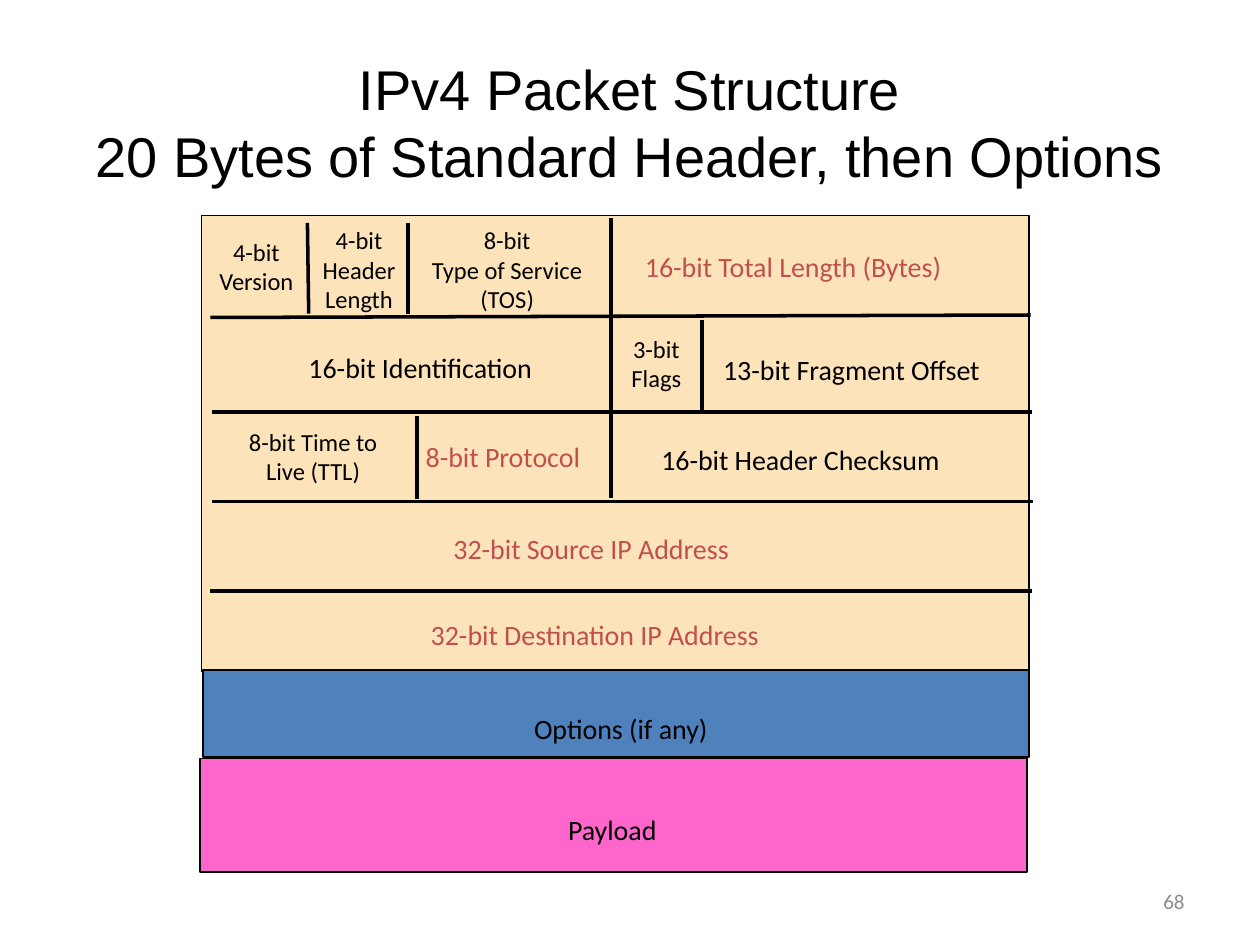
from typing import NamedTuple

from lxml import etree
from pptx import Presentation
from pptx.dml.color import RGBColor
from pptx.enum import shapes, text
from pptx.oxml import ns
from pptx.util import Inches, Pt

COLORS = {
    "black": "000000",
    "key": "C0504D",
    "header": "FDE3BA",
    "options": "4F81BD",
    "payload": "FF66CC",
    "number": "8C8C8C",
}
LEFT, CENTER, RIGHT = text.PP_ALIGN.LEFT, text.PP_ALIGN.CENTER, text.PP_ALIGN.RIGHT


class Band(NamedTuple):
    x: float
    y: float
    w: float
    h: float
    color: str


class Rule(NamedTuple):
    x1: float
    y1: float
    x2: float
    y2: float


class Label(NamedTuple):
    x: float
    y: float
    w: float
    h: float
    words: str
    size: int = 16
    color: str = "black"
    align: text.PP_ALIGN = LEFT


BANDS = [
    Band(1.6, 1.71, 6.57, 3.62, "header"),
    Band(1.61, 5.32, 6.56, 0.69, "options"),
    Band(1.59, 6.02, 6.56, 0.9, "payload"),
]
RULES = [
    Rule(1.67, 2.52, 8.18, 2.5),
    Rule(1.68, 3.27, 8.19, 3.27),
    Rule(1.68, 3.98, 8.2, 3.98),
    Rule(1.67, 4.69, 8.19, 4.69),
    Rule(4.85, 1.73, 4.85, 3.95),
    Rule(3.24, 1.77, 3.24, 2.49),
    Rule(2.44, 1.77, 2.45, 2.49),
    Rule(5.57, 2.54, 5.57, 3.26),
    Rule(3.31, 3.3, 3.31, 3.96),
]
LABELS = [
    Label(1.63, 1.83, 0.81, 0.57, "4-bit\nVersion", 14, align=CENTER),
    Label(2.45, 1.74, 0.8, 0.81, "4-bit\nHeader\nLength", 14, align=CENTER),
    Label(3.32, 1.74, 1.41, 0.81, "8-bit\nType of Service\n(TOS)", 14, align=CENTER),
    Label(5.02, 1.93, 2.61, 0.37, "16-bit Total Length (Bytes)", color="key"),
    Label(2.35, 2.73, 2.06, 0.37, "16-bit Identification"),
    Label(4.91, 2.6, 0.6, 0.57, "3-bit\nFlags", 14, align=CENTER),
    Label(5.64, 2.75, 2.28, 0.37, "13-bit Fragment Offset"),
    Label(1.87, 3.34, 1.23, 0.57, "8-bit Time to\nLive (TTL)", 14, align=CENTER),
    Label(3.28, 3.44, 1.45, 0.37, "8-bit Protocol", color="key"),
    Label(5.15, 3.46, 2.44, 0.37, "16-bit Header Checksum"),
    Label(3.5, 4.17, 2.42, 0.37, "32-bit Source IP Address", color="key"),
    Label(3.32, 4.85, 2.85, 0.37, "32-bit Destination IP Address", color="key"),
    Label(4.14, 5.6, 1.6, 0.37, "Options (if any)"),
    Label(4.41, 6.4, 0.92, 0.37, "Payload"),
]
PAGE_NUMBER = Label(7.17, 6.95, 2.33, 0.4, "68", 12, "number", RIGHT)


def rgb(name: str) -> RGBColor:
    return RGBColor.from_string(COLORS[name])


def set_attrs(target, values: dict) -> None:
    for name, value in values.items():
        setattr(target, name, value)


def style_text(tf, font: str, size: int, color: str, align: text.PP_ALIGN) -> None:
    for p in tf.paragraphs:
        p.alignment = align
        for r in p.runs:
            set_attrs(r.font, {"name": font, "size": Pt(size)})
            r.font.color.rgb = rgb(color)


def add_title(slide, words: str) -> None:
    sp = slide.shapes.title
    set_attrs(sp, {"left": Inches(0.5), "top": Inches(0.3),
                   "width": Inches(9), "height": Inches(1.25)})
    tf = sp.text_frame
    set_attrs(tf, {"text": words, "vertical_anchor": text.MSO_ANCHOR.BOTTOM,
                   "auto_size": text.MSO_AUTO_SIZE.NONE})
    style_text(tf, "Arial", 32, "black", CENTER)


def add_band(slide, band: Band) -> None:
    sp = slide.shapes.add_shape(shapes.MSO_SHAPE.RECTANGLE, *map(Inches, band[:4]))
    sp.shadow.inherit = False
    sp.fill.solid()
    sp.fill.fore_color.rgb = rgb(band.color)
    sp.line.color.rgb = rgb("black")
    sp.line.width = Pt(1)


def add_rule(slide, rule: Rule) -> None:
    line = slide.shapes.add_connector(shapes.MSO_CONNECTOR.STRAIGHT, *map(Inches, rule))
    line.line.color.rgb = rgb("black")
    line.line.width = Pt(2)
    etree.SubElement(line._element.spPr, ns.qn("a:effectLst"))


def add_label(slide, label: Label, anchor: text.MSO_ANCHOR = text.MSO_ANCHOR.TOP) -> None:
    tf = slide.shapes.add_textbox(*map(Inches, label[:4])).text_frame
    set_attrs(tf, {"text": label.words, "word_wrap": False, "vertical_anchor": anchor})
    style_text(tf, "Calibri", label.size, label.color, label.align)


def main() -> None:
    prs = Presentation()
    set_attrs(prs, {"slide_width": Inches(10), "slide_height": Inches(7.5)})
    slide = prs.slides.add_slide(prs.slide_layouts.get_by_name("Title Only"))
    add_title(slide, "IPv4 Packet Structure\v20 Bytes of Standard Header, then Options")
    for band in BANDS:
        add_band(slide, band)
    for rule in RULES:
        add_rule(slide, rule)
    for label in LABELS:
        add_label(slide, label)
    add_label(slide, PAGE_NUMBER, text.MSO_ANCHOR.MIDDLE)
    prs.save("out.pptx")


if __name__ == "__main__":
    main()
